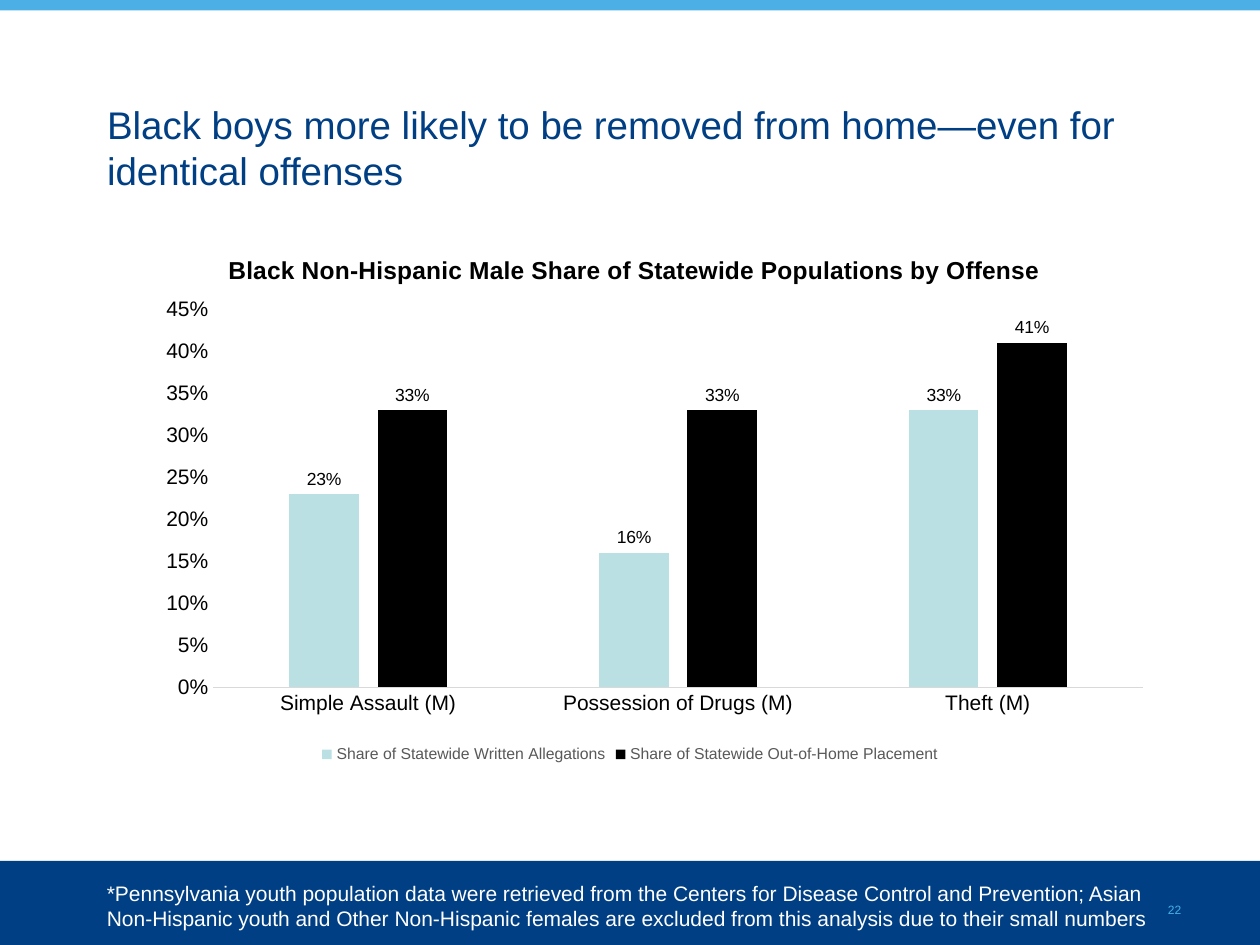
from dataclasses import dataclass

from pptx import Presentation
from pptx.chart.data import CategoryChartData
from pptx.dml.color import RGBColor
from pptx.enum.chart import (XL_CHART_TYPE, XL_LABEL_POSITION,
                             XL_LEGEND_POSITION, XL_TICK_MARK)
from pptx.enum.shapes import MSO_SHAPE
from pptx.enum.text import MSO_ANCHOR, MSO_AUTO_SIZE, PP_ALIGN
from pptx.oxml import parse_xml
from pptx.oxml.ns import nsdecls, qn
from pptx.slide import Slide
from pptx.util import Inches, Pt

NAVY = RGBColor(0x00, 0x3F, 0x83)
SKY = RGBColor(0x4C, 0xAF, 0xE6)
PAGE_BLUE = RGBColor(0x46, 0xB0, 0xE7)
PALE_TEAL = RGBColor(0xBB, 0xE0, 0xE3)
BLACK = RGBColor(0x00, 0x00, 0x00)
WHITE = RGBColor(0xFF, 0xFF, 0xFF)
GRAY = RGBColor(0x59, 0x59, 0x59)
AXIS_GRAY = RGBColor(0xD9, 0xD9, 0xD9)

WIDTH, HEIGHT = Inches(10), Inches(7.5)
COLUMNS, ROWS = 40, 30

OFFENSES = ["Simple Assault (M)", "Possession of Drugs (M)", "Theft (M)"]
SHARES = [
    ("Share of Statewide Written Allegations", (0.23, 0.16, 0.33), PALE_TEAL),
    ("Share of Statewide Out-of-Home Placement", (0.33, 0.33, 0.41), BLACK),
]


def grid(left, top, columns, rows):
    """Turn grid units into slide lengths."""
    across, down = WIDTH / COLUMNS, HEIGHT / ROWS
    return [int(n) for n in (left * across, top * down, columns * across, rows * down)]


def set_font(font, size, color, face="Arial", bold=False):
    font.name, font.size, font.bold = face, Pt(size), bold
    font.color.rgb = color


def write(frame, text, size, color, wrap=True, baseline=None, **font_options):
    frame.word_wrap = wrap
    frame.auto_size = MSO_AUTO_SIZE.NONE
    frame.vertical_anchor = MSO_ANCHOR.TOP
    paragraph = frame.paragraphs[0]
    paragraph.alignment = PP_ALIGN.LEFT
    run = paragraph.add_run()
    run.text = text
    set_font(run.font, size, color, **font_options)
    if baseline is not None:
        run.font.element.set("baseline", str(baseline)) if hasattr(
            run.font, "element") else paragraph.runs[0]._r.get_or_add_rPr().set(
            "baseline", str(baseline))


def manual_layout(left, top, width=None, height=None):
    """Build a chart layout given in shares of the chart's size."""
    target = '<c:layoutTarget val="inner"/>' if width else ""
    lengths = {"x": left, "y": top, "w": width, "h": height}
    modes = '<c:xMode val="edge"/><c:yMode val="edge"/>'
    values = "".join(f'<c:{key} val="{value}"/>'
                     for key, value in lengths.items() if value is not None)
    return parse_xml(f'<c:layout {nsdecls("c")}><c:manualLayout>'
                     f'{target}{modes}{values}</c:manualLayout></c:layout>')


def place(part, position, layout):
    """Put a layout into a chart part in place of its automatic one."""
    for automatic in part.findall(qn("c:layout")):
        part.remove(automatic)
    part.insert(position, layout)


@dataclass
class SlideBuilder:
    slide: Slide
    text_size: int = 12
    label_size: int = 10
    legend_size: int = 9

    def band(self, area, color):
        band = self.slide.shapes.add_shape(MSO_SHAPE.RECTANGLE, *grid(*area))
        band.shadow.inherit = False
        band.fill.solid()
        band.fill.fore_color.rgb = color
        band.line.fill.background()

    def title(self, area, text):
        title = self.slide.shapes.title
        title.left, title.top, title.width, title.height = grid(*area)
        write(title.text_frame, text, 22, NAVY)

    def text(self, area, text, color, **options):
        box = self.slide.shapes.add_textbox(*grid(*area))
        write(box.text_frame, text, self.text_size, color, **options)

    def column_chart(self, area, heading, categories, series):
        data = CategoryChartData(number_format="0%")
        data.categories = categories
        for name, values, _ in series:
            data.add_series(name, values)
        chart = self.slide.shapes.add_chart(
            XL_CHART_TYPE.COLUMN_CLUSTERED, *grid(*area), data).chart
        set_font(chart.font, self.label_size, BLACK)

        chart.has_title = True
        write(chart.chart_title.text_frame, heading, 14, BLACK, bold=True)
        chart.chart_title.include_in_layout = False
        chart_root = chart.element.find(qn("c:chart"))
        place(chart_root.find(qn("c:title")), 1, manual_layout(0.12, 0.04))
        place(chart_root.find(qn("c:plotArea")), 0,
              manual_layout(0.11, 0.15, 0.87, 0.7))

        chart.has_legend = True
        chart.legend.position = XL_LEGEND_POSITION.BOTTOM
        chart.legend.include_in_layout = False
        set_font(chart.legend.font, self.legend_size, GRAY)
        self.style_axes(chart.category_axis, chart.value_axis)
        self.style_columns(chart.plots[0], [color for _, _, color in series])

    def style_axes(self, category_axis, value_axis):
        for axis in (category_axis, value_axis):
            axis.major_tick_mark = axis.minor_tick_mark = XL_TICK_MARK.NONE
            axis.has_major_gridlines = False
            set_font(axis.tick_labels.font, self.text_size, BLACK)
        category_axis.format.line.color.rgb = AXIS_GRAY
        category_axis.format.line.width = Pt(0.75)
        value_axis.format.line.fill.background()
        value_axis.minimum_scale, value_axis.maximum_scale = 0, 0.45
        value_axis.major_unit = 0.05
        value_axis.tick_labels.number_format = "0%"
        value_axis.tick_labels.number_format_is_linked = False

    def style_columns(self, plot, colors):
        plot.gap_width, plot.overlap = 219, -27
        plot.vary_by_categories = False
        for series, color in zip(plot.series, colors):
            series.format.fill.solid()
            series.format.fill.fore_color.rgb = color
            labels = series.data_labels
            labels.show_value = True
            labels.position = XL_LABEL_POSITION.OUTSIDE_END
            labels.number_format = "0%"
            labels.number_format_is_linked = False
            set_font(labels.font, self.label_size, BLACK)


def main():
    deck = Presentation()
    deck.slide_width, deck.slide_height = WIDTH, HEIGHT
    title_only = deck.slide_layouts[5]
    builder = SlideBuilder(deck.slides.add_slide(title_only))

    builder.band((0, 27.33, COLUMNS, 2.67), NAVY)
    builder.band((0, 0, COLUMNS, 0.33), SKY)
    builder.text((36.68, 28, 1.36, 0.92), "22", PAGE_BLUE, wrap=False, baseline=-25000)
    builder.title((3, 3, 34, 2.32), "Black boys more likely to be removed from "
                  "home—even for identical offenses")
    builder.text((3, 27.76, 34, 2),
                 "*Pennsylvania youth population data were retrieved from the Centers "
                 "for Disease Control and Prevention; Asian Non-Hispanic youth and Other "
                 "Non-Hispanic females are excluded from this analysis due to their "
                 "small numbers", WHITE)
    builder.column_chart((3.04, 7.24, 33.92, 17.16),
                         "Black Non-Hispanic Male Share of Statewide Populations by Offense",
                         OFFENSES, SHARES)
    deck.save("out.pptx")


if __name__ == "__main__":
    main()
